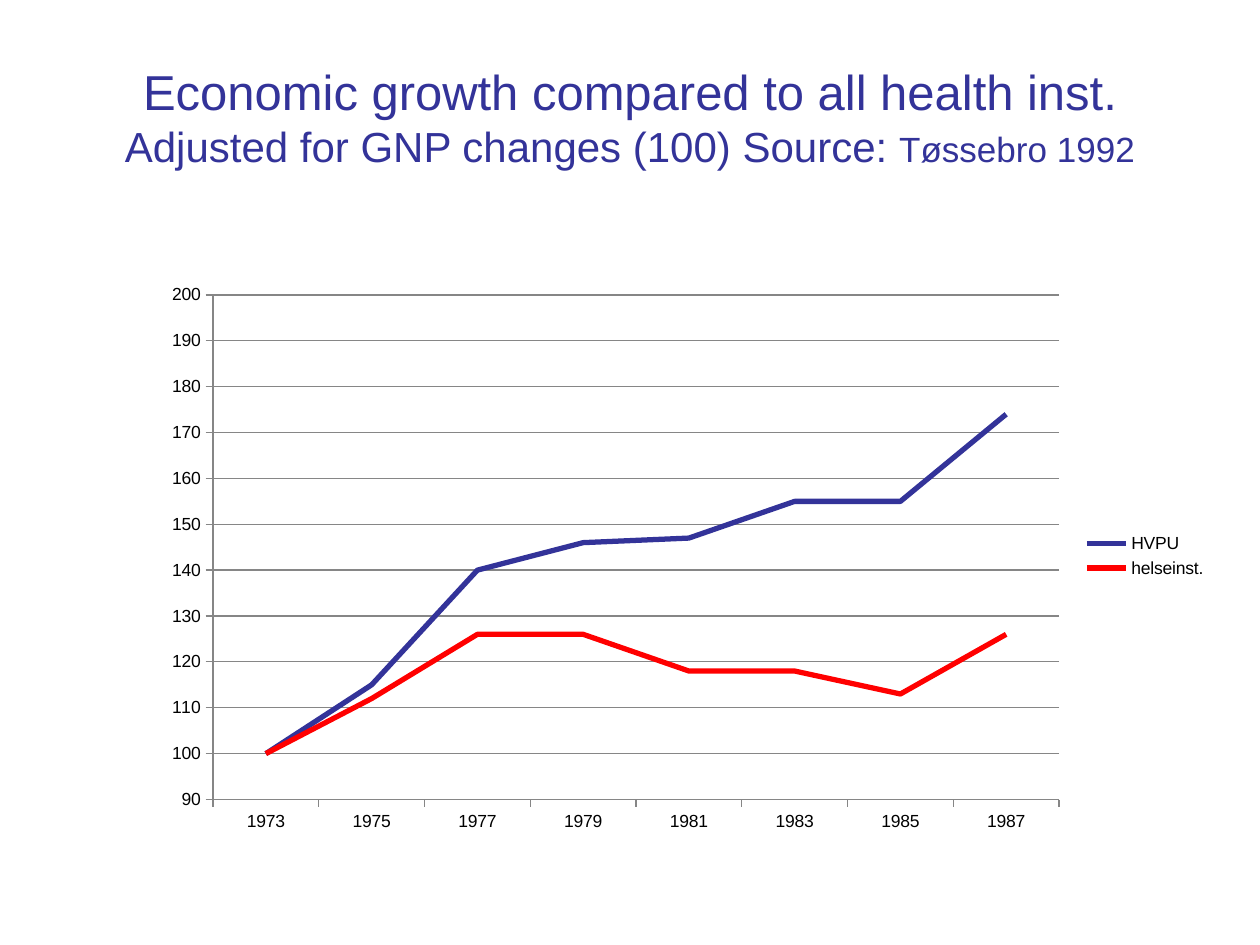
from lxml.etree import SubElement
from pptx import Presentation
from pptx.chart.data import CategoryChartData
from pptx.dml.color import RGBColor
from pptx.enum.chart import XL_CHART_TYPE, XL_LEGEND_POSITION, XL_MARKER_STYLE, XL_TICK_MARK
from pptx.enum.text import MSO_ANCHOR, PP_ALIGN
from pptx.oxml.ns import qn
from pptx.util import Cm, Pt

FONT = "Arial"
COLORS = {"indigo": "333399", "red": "FF0000", "black": "000000", "gray": "868686"}
YEARS = [str(year) for year in range(1973, 1988, 2)]
SERIES = [
    ("HVPU", [100, 115, 140, 146, 147, 155, 155, 174], "indigo"),
    ("helseinst.", [100, 112, 126, 126, 118, 118, 113, 126], "red"),
]
TITLE_LINES = [
    [("Economic growth compared to all health inst.", 28)],
    [("Adjusted for GNP changes (100) Source: ", 24), ("Tøssebro 1992", 20)],
]
PLOT_AREA = {"x": 0.06, "y": 0.04, "w": 0.79, "h": 0.89}


def color(name):
    return RGBColor.from_string(COLORS[name])


def style_font(font, size, color_name):
    font.name = FONT
    font.size = Pt(size)
    font.color.rgb = color(color_name)


def style_line(line, width, color_name):
    line.width = Pt(width)
    line.color.rgb = color(color_name)


def add_title(slide):
    shape = slide.shapes.add_textbox(Cm(1.27), Cm(0.76), Cm(22.86), Cm(3.18))
    frame = shape.text_frame
    frame.word_wrap = True
    frame.vertical_anchor = MSO_ANCHOR.MIDDLE
    paragraph = frame.paragraphs[0]
    paragraph.alignment = PP_ALIGN.CENTER
    for index, line in enumerate(TITLE_LINES):
        if index:
            paragraph.add_line_break()
        for text, size in line:
            run = paragraph.add_run()
            run.text = text
            style_font(run.font, size, "indigo")


def set_plot_layout(chart):
    plot_area = chart.plots[0]._element.getparent()
    layout = plot_area.find(qn("c:layout"))
    if layout is None:
        layout = SubElement(plot_area, qn("c:layout"))
        plot_area.insert(0, layout)
    manual = SubElement(layout, qn("c:manualLayout"))
    settings = {"layoutTarget": "inner", "xMode": "edge", "yMode": "edge", **PLOT_AREA}
    for tag, value in settings.items():
        SubElement(manual, qn(f"c:{tag}")).set("val", str(value))


def style_axes(chart):
    for axis in (chart.category_axis, chart.value_axis):
        axis.major_tick_mark = XL_TICK_MARK.OUTSIDE
        axis.minor_tick_mark = XL_TICK_MARK.NONE
        style_line(axis.format.line, 0.75, "gray")
    value_axis = chart.value_axis
    value_axis.minimum_scale = 90
    value_axis.maximum_scale = 200
    value_axis.major_unit = 10
    value_axis.has_major_gridlines = True
    style_line(value_axis.major_gridlines.format.line, 0.75, "gray")


def add_growth_chart(slide):
    data = CategoryChartData()
    data.categories = YEARS
    for name, values, _ in SERIES:
        data.add_series(name, values)
    chart = slide.shapes.add_chart(
        XL_CHART_TYPE.LINE, Cm(3), Cm(5.49), Cm(21.59), Cm(11.43), data
    ).chart
    chart.has_title = False
    style_font(chart.font, 10, "black")
    chart.has_legend = True
    chart.legend.position = XL_LEGEND_POSITION.RIGHT
    chart.legend.include_in_layout = False
    chart.plots[0].vary_by_categories = False
    for series, (_, _, color_name) in zip(chart.plots[0].series, SERIES):
        series.smooth = False
        series.marker.style = XL_MARKER_STYLE.NONE
        style_line(series.format.line, 3, color_name)
    style_axes(chart)
    set_plot_layout(chart)


def main():
    presentation = Presentation()
    presentation.slide_width = Cm(25.4)
    presentation.slide_height = Cm(19.05)
    slide = presentation.slides.add_slide(presentation.slide_layouts[6])
    add_title(slide)
    add_growth_chart(slide)
    presentation.save("out.pptx")


if __name__ == "__main__":
    main()
